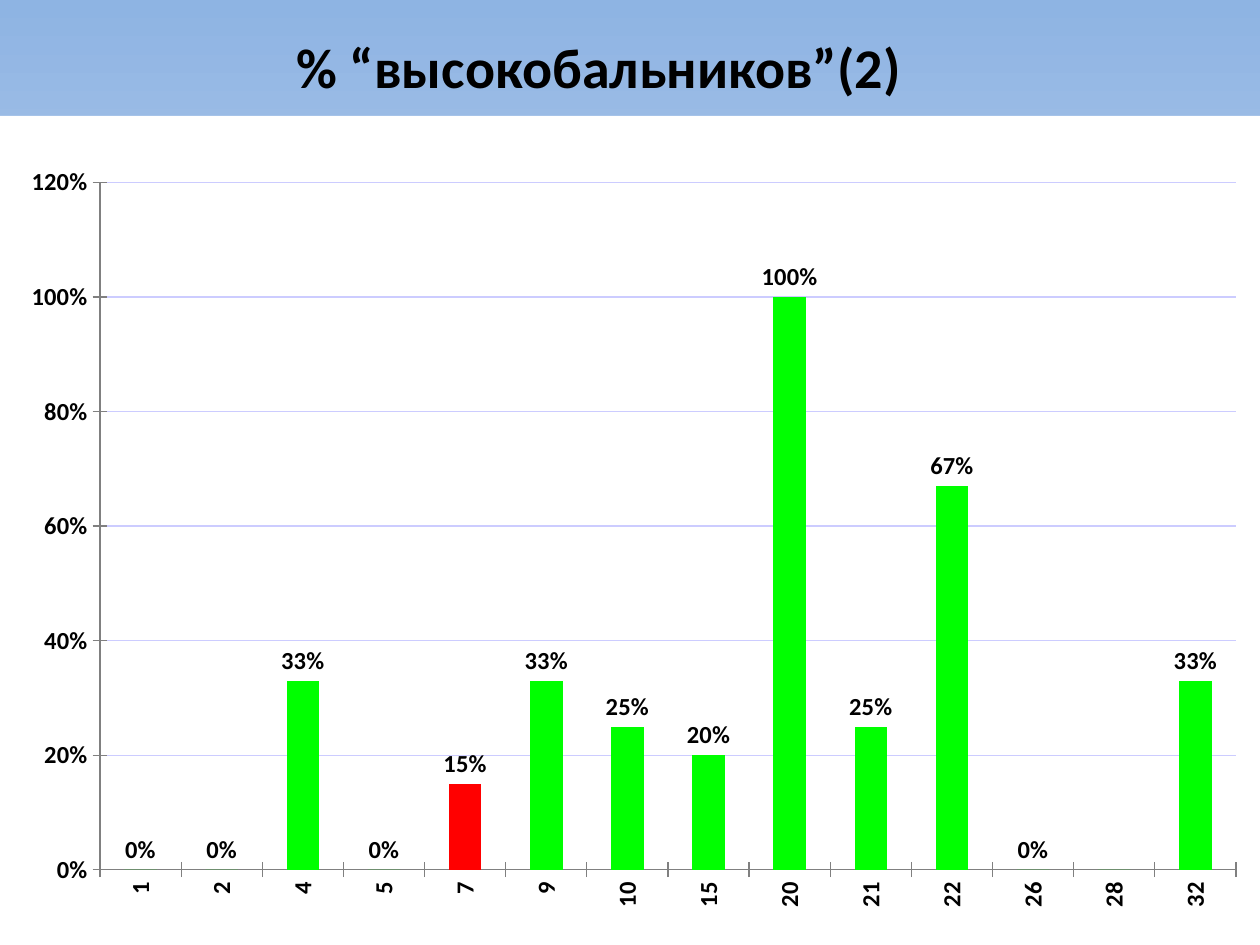
from copy import deepcopy

from lxml import etree
from pptx import Presentation
from pptx.chart.data import CategoryChartData
from pptx.dml.color import RGBColor
from pptx.enum.chart import XL_CHART_TYPE as ChartType
from pptx.enum.chart import XL_LABEL_POSITION as LabelPosition
from pptx.enum.chart import XL_TICK_MARK as TickMark
from pptx.enum.text import MSO_AUTO_SIZE as AutoSize
from pptx.enum.text import PP_ALIGN as Align
from pptx.oxml import parse_xml
from pptx.oxml.ns import nsdecls, qn
from pptx.util import Pt

PX = 914400 // 126
BLACK = RGBColor(0x00, 0x00, 0x00)
GREEN = RGBColor(0x00, 0xFF, 0x00)
RED = RGBColor(0xFF, 0x00, 0x00)
GREY = RGBColor(0x80, 0x80, 0x80)
LAVENDER = RGBColor(0xCC, 0xCC, 0xFF)
WHITE = RGBColor(0xFF, 0xFF, 0xFF)
SKY = (
    (0, RGBColor(0x8E, 0xB4, 0xE3)),
    (0.5, RGBColor(0xC2, 0xD1, 0xED)),
    (1, RGBColor(0xE1, 0xE8, 0xF5)),
)

SHARES = {
    "1": 0, "2": 0, "4": 0.33, "5": 0, "7": 0.15, "9": 0.33, "10": 0.25,
    "15": 0.2, "20": 1, "21": 0.25, "22": 0.67, "26": 0, "28": 0, "32": 0.33,
}
HIGHLIGHTED = "7"
UNLABELLED = "28"


def format_font(font, size=14, bold=True, color=BLACK, name="Calibri"):
    font.name, font.size, font.bold = name, Pt(size), bold
    font.color.rgb = color


def write(para, text, align=Align.CENTER, **style):
    para.alignment = align
    span = para.add_run()
    span.text = text
    format_font(span.font, **style)


def hairline(line, color):
    line.color.rgb = color
    line.width = 0


class Page:
    def __init__(self, deck):
        self.slide = deck.slides.add_slide(deck.slide_layouts[6])

    def background(self, stops):
        fill = self.slide.background.fill
        fill.gradient()
        fill.gradient_angle = 270
        stop_list = self.slide.element.find(".//" + qn("a:gsLst"))
        stop_list.append(deepcopy(stop_list[-1]))
        for stop, (position, color) in zip(fill.gradient_stops, stops):
            stop.position = position
            stop.color.rgb = color

    def title(self, text, left, top, width, height):
        box = self.slide.shapes.add_textbox(left * PX, top * PX, width * PX, height * PX)
        frame = box.text_frame
        frame.word_wrap = False
        frame.auto_size = AutoSize.SHAPE_TO_FIT_TEXT
        write(frame.paragraphs[0], text, size=32)

    def column_chart(self, shares, left, top, width, height):
        data = CategoryChartData(number_format="0%")
        data.categories = list(shares)
        data.add_series("Series 1", list(shares.values()))
        frame = self.slide.shapes.add_chart(
            ChartType.COLUMN_CLUSTERED, left * PX, top * PX, width * PX, height * PX, data
        )
        chart = frame.chart
        chart.has_title = chart.has_legend = False
        format_font(chart.font, size=10, bold=False)
        self.style_axes(chart)
        self.style_columns(chart.plots[0], list(shares))
        self.place_plot(chart, x=0.025, y=0.062, w=0.956, h=0.893)

    def style_axes(self, chart):
        for axis in (chart.category_axis, chart.value_axis):
            axis.major_tick_mark = TickMark.CROSS
            format_font(axis.tick_labels.font)
            hairline(axis.format.line, GREY)
        body = chart.category_axis._element.find(".//" + qn("a:bodyPr"))
        body.set("rot", "-5400000")
        body.set("vert", "horz")
        scale = chart.value_axis
        scale.minimum_scale, scale.maximum_scale, scale.major_unit = 0, 1.2, 0.2
        scale.tick_labels.number_format = "0%"
        scale.tick_labels.number_format_is_linked = False
        hairline(scale.major_gridlines.format.line, LAVENDER)

    def style_columns(self, plot, names):
        plot.gap_width = 150
        plot.vary_by_categories = False
        columns = plot.series[0]
        columns.invert_if_negative = False
        for part, color in ((columns, GREEN), (columns.points[names.index(HIGHLIGHTED)], RED)):
            part.format.fill.solid()
            part.format.fill.fore_color.rgb = color
        labels = columns.data_labels
        labels.show_value = True
        labels.number_format = "0%"
        labels.number_format_is_linked = False
        labels.position = LabelPosition.OUTSIDE_END
        format_font(labels.font)
        hidden = parse_xml(
            f'<c:dLbl {nsdecls("c")}><c:idx val="{names.index(UNLABELLED)}"/>'
            '<c:delete val="1"/></c:dLbl>'
        )
        labels._element.insert(0, hidden)

    def place_plot(self, chart, **bounds):
        space = chart._chartSpace
        area = space.find(".//" + qn("c:plotArea"))
        for unused in area.findall(qn("c:layout")):
            area.remove(unused)
        layout = etree.Element(qn("c:layout"))
        manual = etree.SubElement(layout, qn("c:manualLayout"))
        for axis in "xy":
            etree.SubElement(manual, qn(f"c:{axis}Mode"), val="edge")
        for key, value in bounds.items():
            etree.SubElement(manual, qn(f"c:{key}"), val=str(value))
        area.insert(0, layout)
        backdrop = parse_xml(
            f'<c:spPr {nsdecls("c", "a")}><a:solidFill><a:srgbClr val="{WHITE}"/></a:solidFill>'
            "<a:ln><a:noFill/></a:ln></c:spPr>"
        )
        space.find(qn("c:chart")).addnext(backdrop)


def main():
    deck = Presentation()
    deck.slide_width, deck.slide_height = 1260 * PX, 945 * PX
    page = Page(deck)
    page.background(SKY)
    page.title("% “высокобальников”(2)", 281, 26, 636, 81)
    page.column_chart(SHARES, 0, 116, 1260, 829)
    deck.save("out.pptx")


if __name__ == "__main__":
    main()
